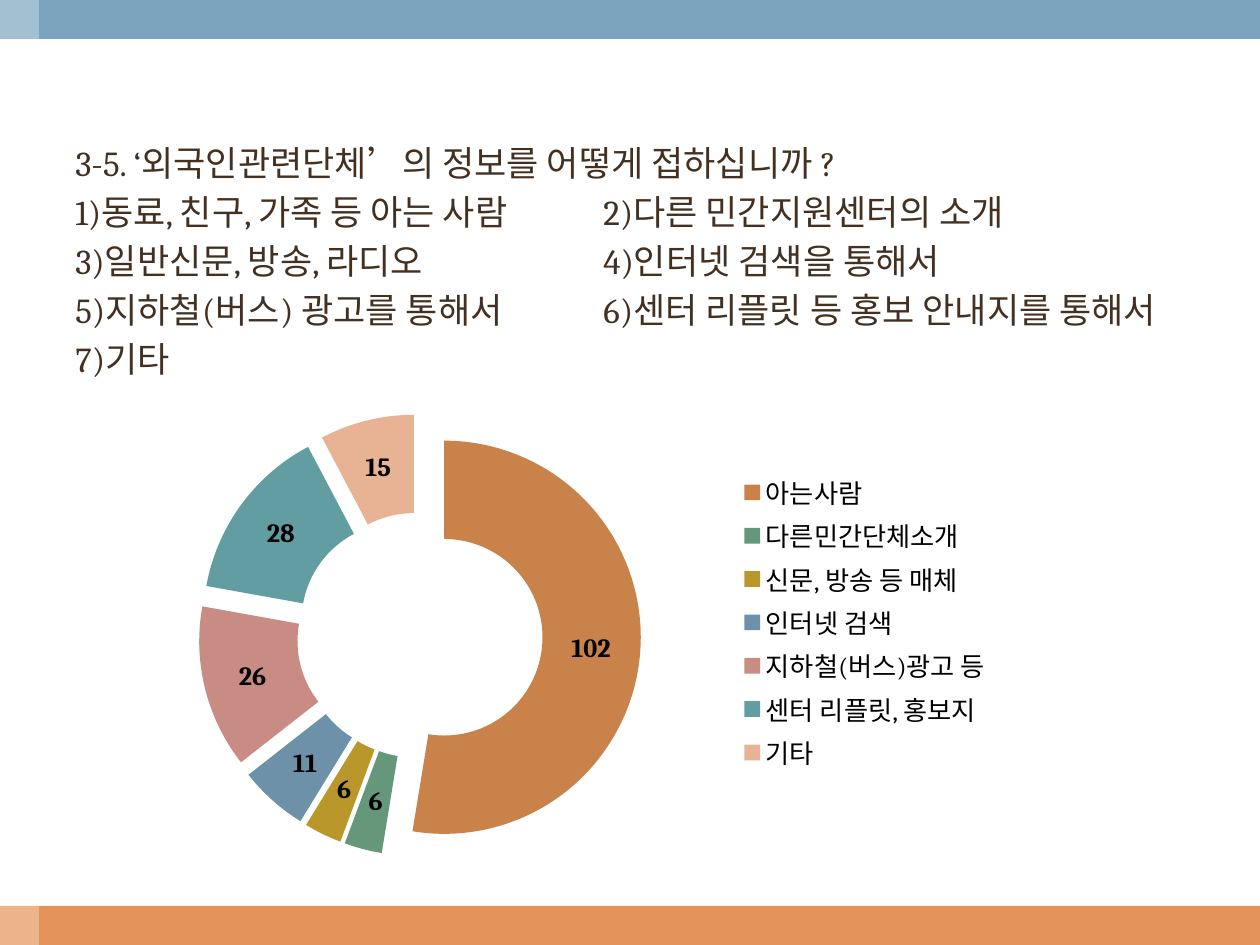
import pptx
import pptx.chart.data
import pptx.dml.color
import pptx.enum.chart
import pptx.enum.shapes
import pptx.oxml
import pptx.oxml.ns
import pptx.util
from pptx.util import Inches

FONT = "Cambria"
COLORS = {
    "top": "7BA5BE",
    "bottom": "E49458",
    "strip": "FFFFFF",
    "text": "433021",
    "chart_text": "000000",
}
QUESTION = [
    "3-5. ‘외국인관련단체’의 정보를 어떻게 접하십니까 ?",
    "1)동료, 친구, 가족 등 아는 사람\t2)다른 민간지원센터의 소개",
    "3)일반신문, 방송, 라디오\t4)인터넷 검색을 통해서",
    "5)지하철(버스) 광고를 통해서\t6)센터 리플릿 등 홍보 안내지를 통해서",
    "7)기타",
]
ANSWERS = [
    ("아는사람", 102, "C8824A"),
    ("다른민간단체소개", 6, "65987A"),
    ("신문, 방송 등 매체", 6, "BA972A"),
    ("인터넷 검색", 11, "6C91A9"),
    ("지하철(버스)광고 등", 26, "C98C84"),
    ("센터 리플릿, 홍보지", 28, "629EA1"),
    ("기타", 15, "E8B394"),
]
PLOT_LAYOUT = {"x": 0.025, "y": 0.065, "w": 0.559, "h": 0.924}


def rgb(value):
    return pptx.dml.color.RGBColor.from_string(value)


def make_element(xml):
    """Parse a snippet whose root tag takes the a: and c: namespaces."""
    head, mark, tail = xml.partition(" ")
    return pptx.oxml.parse_xml(f"{head} {pptx.oxml.ns.nsdecls('a', 'c')} {tail}")


def add_band(slide, left, top, width, height, color, opacity=100):
    band = slide.shapes.add_shape(
        pptx.enum.shapes.MSO_SHAPE.RECTANGLE,
        Inches(left), Inches(top), Inches(width), Inches(height))
    band.shadow.inherit = False
    band.line.fill.background()
    band.fill.solid()
    band.fill.fore_color.rgb = rgb(color)
    if opacity < 100:
        tint = band.fill._xPr.find(".//" + pptx.oxml.ns.qn("a:srgbClr"))
        tint.append(make_element(f'<a:alpha val="{opacity * 1000}"/>'))


def add_question(slide):
    box = slide.shapes.add_textbox(Inches(0.5), Inches(1.02), Inches(9), Inches(2.05))
    frame = box.text_frame
    frame.word_wrap = True
    for index, line in enumerate(QUESTION):
        para = frame.paragraphs[0] if index == 0 else frame.add_paragraph()
        para.line_spacing = pptx.util.Pt(28)
        para._p.get_or_add_pPr().append(make_element(
            f'<a:tabLst ><a:tab pos="{Inches(4.19)}" algn="l"/></a:tabLst>'))
        span = para.add_run()
        span.text = line
        span.font.name = FONT
        span.font.size = pptx.util.Pt(20)
        span.font.color.rgb = rgb(COLORS["text"])


def place_plot(chart):
    """Fix the inner plot area as fractions of the chart."""
    area = chart._chartSpace.chart.plotArea
    old = area.find(pptx.oxml.ns.qn("c:layout"))
    if old is not None:
        area.remove(old)
    sizes = "".join(f'<c:{key} val="{value}"/>' for key, value in PLOT_LAYOUT.items())
    area.insert(0, make_element(
        '<c:layout ><c:manualLayout><c:layoutTarget val="inner"/>'
        '<c:xMode val="edge"/><c:yMode val="edge"/>'
        f'{sizes}</c:manualLayout></c:layout>'))


def add_answer_chart(slide):
    names, counts, colors = zip(*ANSWERS)
    data = pptx.chart.data.CategoryChartData()
    data.categories = names
    data.add_series("Series 1", counts)
    chart = slide.shapes.add_chart(
        pptx.enum.chart.XL_CHART_TYPE.DOUGHNUT_EXPLODED,
        Inches(1.3), Inches(3.04), Inches(6.67), Inches(3.8), data).chart
    chart.has_title = False
    chart.font.name = FONT
    chart.font.size = pptx.util.Pt(18)
    chart.font.color.rgb = rgb(COLORS["chart_text"])
    place_plot(chart)

    chart.has_legend = True
    chart.legend.position = pptx.enum.chart.XL_LEGEND_POSITION.RIGHT
    chart.legend.include_in_layout = False
    chart.legend.font.size = pptx.util.Pt(15)

    plot = chart.plots[0]
    plot.vary_by_categories = True
    plot.has_data_labels = True
    labels = plot.data_labels
    labels.show_value = True
    labels.show_percentage = False
    labels.font.name = FONT
    labels.font.size = pptx.util.Pt(15)
    labels.font.bold = True
    labels.font.color.rgb = rgb(COLORS["chart_text"])

    series = plot.series[0]
    for old in series._element.findall(pptx.oxml.ns.qn("c:explosion")):
        series._element.remove(old)
    series._element.find(pptx.oxml.ns.qn("c:tx")).addnext(
        make_element('<c:explosion val="25"/>'))
    for index, color in enumerate(colors):
        slice_format = series.points[index].format
        slice_format.fill.solid()
        slice_format.fill.fore_color.rgb = rgb(color)
        slice_format.line.fill.background()


def main():
    deck = pptx.Presentation()
    deck.slide_width, deck.slide_height = Inches(10), Inches(7.5)
    slide = deck.slides.add_slide(deck.slide_layouts[6])
    add_band(slide, 0, 7.19, 10, 0.31, COLORS["bottom"])
    add_band(slide, 0, 0, 10, 0.31, COLORS["top"])
    add_band(slide, 0, 0, 0.31, 7.5, COLORS["strip"], opacity=30)
    add_question(slide)
    add_answer_chart(slide)
    deck.save("out.pptx")


if __name__ == "__main__":
    main()
